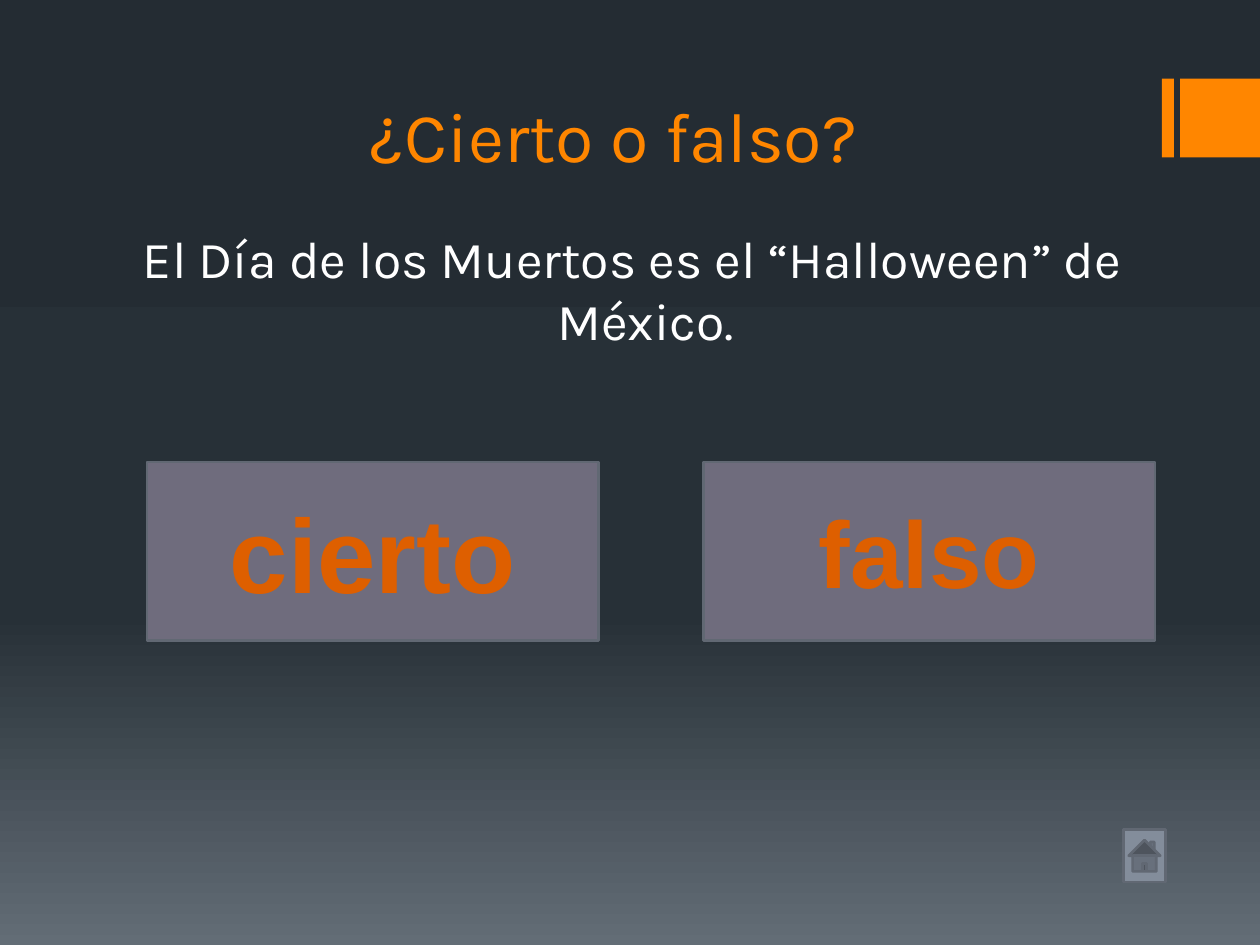
import copy

import pptx
import pptx.dml.color
import pptx.enum.shapes
import pptx.enum.text
import pptx.oxml.ns
import pptx.util

SHAPES = pptx.enum.shapes.MSO_SHAPE
ALIGN = pptx.enum.text.PP_ALIGN
ANCHOR = pptx.enum.text.MSO_ANCHOR
COLORS = {
    "night": "242C33",
    "slate": "273037",
    "mist": "636D76",
    "accent": "FF8600",
    "answer": "DE5F00",
    "button": "6F6C7D",
    "border": "616873",
    "home": "838D9B",
    "white": "FFFFFF",
}


def color(name):
    return pptx.dml.color.RGBColor.from_string(COLORS[name])


class QuizSlide:
    """Places elements on a grid of 120 columns by 90 rows."""

    columns, rows = 120, 90
    font = "Karla"
    button_font = "Arial"

    def __init__(self, presentation):
        self.cell_width = presentation.slide_width / self.columns
        self.cell_height = presentation.slide_height / self.rows
        self.slide = presentation.slides.add_slide(presentation.slide_layouts[5])

    def box(self, column, row, width, height):
        return (
            round(column * self.cell_width),
            round(row * self.cell_height),
            round(width * self.cell_width),
            round(height * self.cell_height),
        )

    def background(self, stops):
        """Fill from top to bottom with (position, color name) stops."""
        fill = self.slide.background.fill
        fill.gradient()
        fill.gradient_angle = 270
        stop_list = self.slide.element.find(".//" + pptx.oxml.ns.qn("a:gsLst"))
        while len(stop_list) < len(stops):
            stop_list.append(copy.deepcopy(stop_list[-1]))
        for stop, (position, name) in zip(fill.gradient_stops, stops):
            stop.position = position
            stop.color.rgb = color(name)

    def set_text(self, shape, text, size, name, align, anchor, font=font, bold=False):
        frame = shape.text_frame
        frame.text = text
        frame.word_wrap = True
        frame.auto_size = pptx.enum.text.MSO_AUTO_SIZE.NONE
        frame.vertical_anchor = anchor
        paragraph = frame.paragraphs[0]
        paragraph.alignment = align
        for run in paragraph.runs:
            run.font.name = font
            run.font.size = pptx.util.Pt(size)
            run.font.bold = bold
            run.font.color.rgb = color(name)
        return paragraph

    def title(self, text, *place):
        title = self.slide.shapes.title
        title.left, title.top, title.width, title.height = self.box(*place)
        self.set_text(title, text, 40, "accent", ALIGN.LEFT, ANCHOR.BOTTOM)
        title.text_frame.word_wrap = False

    def statement(self, text, *place):
        shape = self.slide.shapes.add_textbox(*self.box(*place))
        paragraph = self.set_text(shape, text, 29.6, "white", ALIGN.CENTER, ANCHOR.TOP)
        paragraph.space_before = pptx.util.Pt(6)
        properties = paragraph._p.get_or_add_pPr()
        properties.set("marL", str(pptx.util.Inches(0.25)))
        properties.set("indent", str(pptx.util.Inches(-0.2)))

    def shape(self, kind, fill, *place, border=None):
        shape = self.slide.shapes.add_shape(kind, *self.box(*place))
        shape.shadow.inherit = False
        shape.fill.solid()
        shape.fill.fore_color.rgb = color(fill)
        if border:
            shape.line.color.rgb = color(border)
            shape.line.width = pptx.util.Pt(1.5)
        else:
            shape.line.fill.background()
        return shape

    def answer(self, text, size, *place):
        button = self.shape(SHAPES.ACTION_BUTTON_CUSTOM, "button", *place, border="border")
        self.set_text(button, text, size, "answer", ALIGN.CENTER, ANCHOR.MIDDLE,
                      font=self.button_font, bold=True)


def main():
    presentation = pptx.Presentation()
    presentation.slide_width = pptx.util.Inches(10)
    presentation.slide_height = pptx.util.Inches(7.5)

    quiz = QuizSlide(presentation)
    quiz.background([(0, "night"), (0.65, "slate"), (1, "mist")])
    for column, width in ((110.65, 1.15), (112.4, 7.6)):
        quiz.shape(SHAPES.RECTANGLE, "accent", column, 7.5, width, 7.5)
    quiz.title("¿Cierto o falso?", 34, 4, 49, 13.4)
    quiz.statement("El Día de los Muertos es el “Halloween” de México.", 6, 21, 108, 12)
    for text, size, column in (("cierto", 60, 14), ("falso", 54, 67)):
        quiz.answer(text, size, column, 44, 43, 17)
    quiz.shape(SHAPES.ACTION_BUTTON_HOME, "home", 107, 79, 4, 5, border="border")

    presentation.save("out.pptx")


if __name__ == "__main__":
    main()
